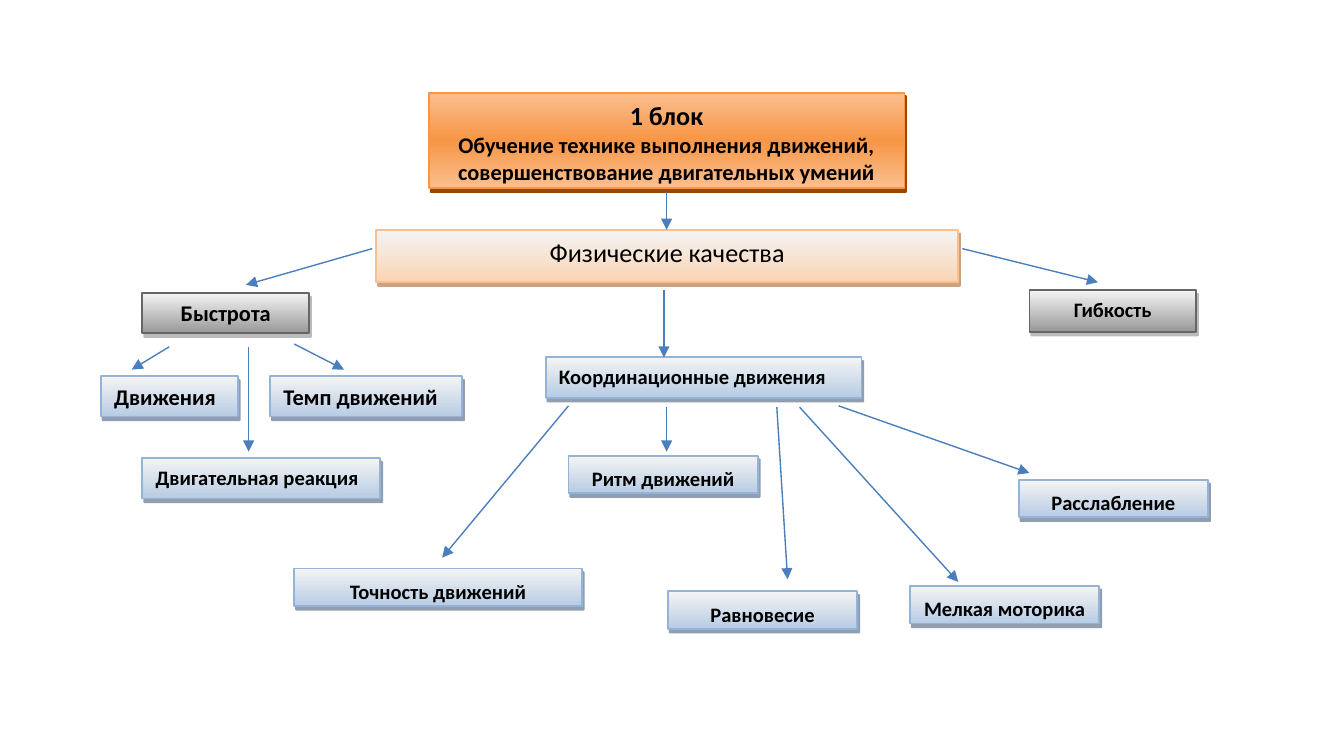
"""Draw a tree of movement skills as shaded boxes joined by arrows."""
from dataclasses import dataclass

from lxml import etree
from pptx import Presentation
from pptx.dml.color import RGBColor
from pptx.enum.shapes import MSO_CONNECTOR, MSO_SHAPE
from pptx.enum.text import MSO_ANCHOR, PP_ALIGN
from pptx.oxml.ns import qn
from pptx.util import Inches, Pt

RECT = MSO_SHAPE.RECTANGLE
STRAIGHT = MSO_CONNECTOR.STRAIGHT
TOP = MSO_ANCHOR.TOP
LEFT, CENTER = PP_ALIGN.LEFT, PP_ALIGN.CENTER
WIDTH = 10
HEIGHT = WIDTH * 9 / 16


@dataclass(frozen=True)
class Look:
    stops: tuple
    edge: str
    shade: str
    alpha: int = 50


@dataclass(frozen=True)
class Theme:
    face: str = "Calibri"
    ink: str = "000000"
    arrow: str = "4B7EBC"
    big: int = 14
    mid: int = 12
    small: int = 11
    head: Look = Look(("FABF8F", "F79646", "FABF8F"), "F79646", "974706", 100)
    peach: Look = Look(("F4F4F4", "FBD4B4"), "FABF8F", "974706")
    gray: Look = Look(("F4F4F4", "999999"), "666666", "797979")
    blue: Look = Look(("F4F4F4", "B8CCE4"), "95B3D7", "243F60")


def assign(item, values):
    for name, value in values.items():
        setattr(item, name, value)


def add(parent, tag, **values):
    return etree.SubElement(parent, qn(tag), {k: str(v) for k, v in values.items()})


class Chart:
    def __init__(self, slide, theme):
        self.slide = slide
        self.theme = theme

    def box(self, place, look, lines, align=CENTER, bold=True, **gaps):
        shape = self.slide.shapes.add_shape(RECT, *map(Inches, place))
        self.paint(shape, look)
        frame = shape.text_frame
        assign(frame, {"word_wrap": True, "vertical_anchor": TOP})
        for i, (text, size) in enumerate(lines):
            para = frame.add_paragraph() if i else frame.paragraphs[0]
            para.text = text
            assign(para, {"alignment": align, **gaps})
            assign(para.font, {"name": self.theme.face, "size": Pt(size), "bold": bold})
            para.font.color.rgb = RGBColor.from_string(self.theme.ink)

    def paint(self, shape, look):
        shape.fill.gradient()
        shape.fill.gradient_angle = 270
        shape.line.color.rgb = RGBColor.from_string(look.edge)
        shape.line.width = Pt(1)
        shape.shadow.inherit = False
        props = shape._element.spPr
        stops = props.find(".//" + qn("a:gsLst"))
        stops.clear()
        for i, color in enumerate(look.stops):
            stop = add(stops, "a:gs", pos=100000 * i // (len(look.stops) - 1))
            add(stop, "a:srgbClr", val=color)
        shade = add(props.find(qn("a:effectLst")), "a:outerShdw", blurRad=0,
                    dist=Pt(2.2), dir=63 * 60000, algn="ctr", rotWithShape=0)
        color = add(shade, "a:srgbClr", val=look.shade)
        add(color, "a:alpha", val=look.alpha * 1000)

    def arrow(self, *ends):
        link = self.slide.shapes.add_connector(STRAIGHT, *map(Inches, ends))
        link.line.color.rgb = RGBColor.from_string(self.theme.arrow)
        link.line.width = Pt(0.75)
        props = link._element.spPr
        add(props.find(qn("a:ln")), "a:tailEnd", type="triangle")
        add(props, "a:effectLst")


def main():
    deck = Presentation()
    assign(deck, {"slide_width": Inches(WIDTH), "slide_height": Inches(HEIGHT)})
    theme = Theme()
    chart = Chart(deck.slides.add_slide(deck.slide_layouts[6]), theme)

    chart.box((3.19, 0.69, 3.54, 0.71), theme.head, [
        ("1 блок", theme.big),
        ("Обучение технике выполнения движений,", theme.mid),
        ("совершенствование двигательных умений", theme.mid),
    ])
    after = {"space_after": Pt(8)}
    chart.box((2.8, 1.71, 4.33, 0.39), theme.peach,
              [("Физические качества", theme.big)], bold=False, **after)

    for text, size, place in (
        ("Быстрота", theme.mid, (1.06, 2.18, 1.24, 0.3)),
        ("Гибкость", theme.small, (7.66, 2.16, 1.24, 0.31)),
    ):
        chart.box(place, theme.gray, [(text, size)], **after)

    for text, size, x, y, width in (
        ("Движения", theme.mid, 0.75, 2.8, 1.02),
        ("Темп движений", theme.mid, 2.01, 2.8, 1.43),
        ("Двигательная реакция", theme.small, 1.06, 3.41, 1.77),
        ("Координационные движения", theme.small, 4.06, 2.66, 2.35),
    ):
        chart.box((x, y, width, 0.3), theme.blue, [(text, size)], LEFT, **after)

    for text, x, y, width in (
        ("Точность движений", 2.19, 4.23, 2.14),
        ("Ритм движений", 4.23, 3.39, 1.41),
        ("Равновесие", 4.97, 4.4, 1.41),
        ("Мелкая моторика", 6.77, 4.36, 1.41),
        ("Расслабление", 7.58, 3.57, 1.41),
    ):
        chart.box((x, y, width, 0.28), theme.blue, [(text, theme.small)],
                  line_spacing=1.15, space_after=Pt(10))

    for ends in (
        (4.96, 1.43, 4.96, 1.71),
        (2.77, 1.85, 1.83, 2.12),
        (7.16, 1.85, 8.17, 2.1),
        (4.94, 2.16, 4.94, 2.66),
        (1.85, 2.58, 1.85, 3.36),
        (1.26, 2.58, 0.98, 2.75),
        (2.19, 2.56, 2.56, 2.75),
        (4.96, 3.03, 4.96, 3.36),
        (4.23, 3.02, 3.29, 4.15),
        (5.78, 3.03, 5.86, 4.31),
        (5.95, 3.03, 7.13, 4.33),
        (6.24, 3.02, 7.66, 3.52),
    ):
        chart.arrow(*ends)

    deck.save("out.pptx")


if __name__ == "__main__":
    main()
